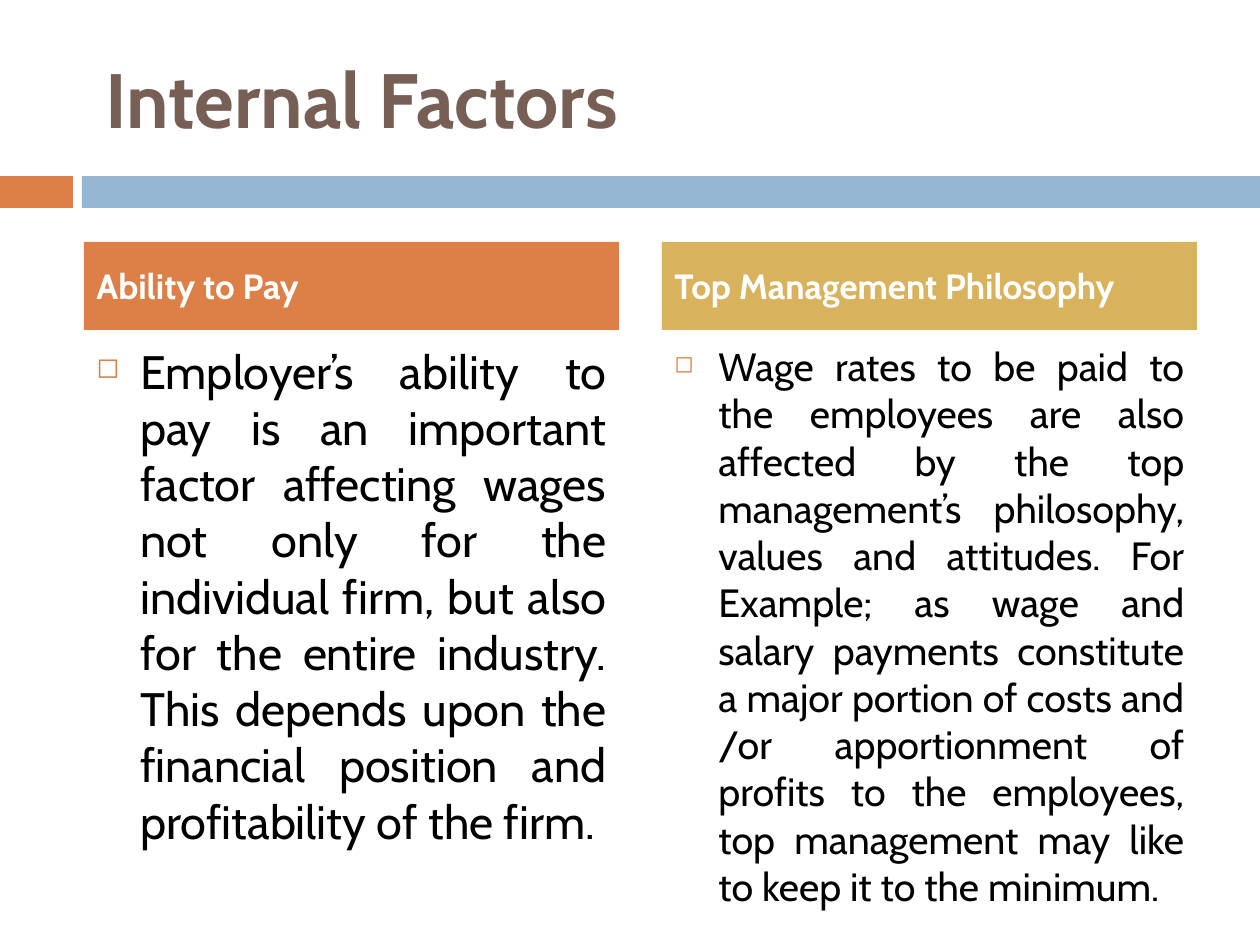
"""Build the Internal Factors slide with two headed columns of text."""
from lxml import etree
from pptx import Presentation, util as u
from pptx.dml.color import RGBColor
from pptx.enum import shapes, text
from pptx.oxml import ns


def px(n):
    return u.Emu(round(n * 914400 / 126))


def style(frame, words, size, color, bold, align):
    frame.text = words
    frame.word_wrap = True
    frame.auto_size = text.MSO_AUTO_SIZE.NONE
    para = frame.paragraphs[0]
    para.alignment = align
    font = para.runs[0].font
    font.name, font.size, font.bold = "Cabin", u.Pt(size), bold
    font.color.rgb = RGBColor.from_string(color)
    return para


left, just = text.PP_ALIGN.LEFT, text.PP_ALIGN.JUSTIFY
middle = text.MSO_ANCHOR.MIDDLE
orange, blue, gold = "DD8047", "94B6D2", "D8B25C"

deck = Presentation()
deck.slide_width, deck.slide_height = px(1260), px(945)
slide = deck.slides.add_slide(deck.slide_layouts[5])

title = slide.shapes.title
title.left, title.top, title.width, title.height = px(73), px(38), px(1124), px(120)
style(title.text_frame, "Internal Factors", 44, "775F55", True, left)
title.text_frame.vertical_anchor = middle
title.text_frame.margin_left = px(32)

bars = [
    (0, 176, 73, 32, orange, None),
    (82, 176, 1178, 32, blue, None),
    (84, 242, 535, 88, orange, "Ability to Pay"),
    (662, 242, 535, 88, gold, "Top Management Philosophy"),
]
for x, y, w, h, color, words in bars:
    bar = slide.shapes.add_shape(shapes.MSO_SHAPE.RECTANGLE, px(x), px(y), px(w), px(h))
    bar.shadow.inherit = False
    bar.fill.solid()
    bar.fill.fore_color.rgb = RGBColor.from_string(color)
    bar.line.fill.background()
    if words:
        para = style(bar.text_frame, words, 20, "FFFFFF", True, just)
        para.space_before = u.Pt(7)
        bar.text_frame.vertical_anchor = middle

bodies = [
    (84, 26.8, "Employer’s ability to pay is an important factor affecting wages not only "
     "for the individual firm, but also for the entire industry. This depends upon the "
     "financial position and profitability of the firm."),
    (662, 22.5, "Wage rates to be paid to the employees are also affected by the top "
     "management’s philosophy, values and attitudes. For Example; as wage and salary "
     "payments constitute a major portion of costs and /or apportionment of profits to "
     "the employees, top management may like to keep it to the minimum."),
]
for x, size, words in bodies:
    box = slide.shapes.add_textbox(px(x), px(336), px(535), px(494))
    para = style(box.text_frame, words, size, "000000", False, just)
    para.space_before = u.Pt(7)
    props = para._p.get_or_add_pPr()
    props.set("marL", str(px(44)))
    props.set("indent", str(-px(44)))
    tint = etree.SubElement(props, ns.qn("a:buClr"))
    etree.SubElement(tint, ns.qn("a:srgbClr"), val=orange)
    etree.SubElement(props, ns.qn("a:buSzPct"), val="60000")
    etree.SubElement(props, ns.qn("a:buChar"), char="◻")

deck.save("out.pptx")
